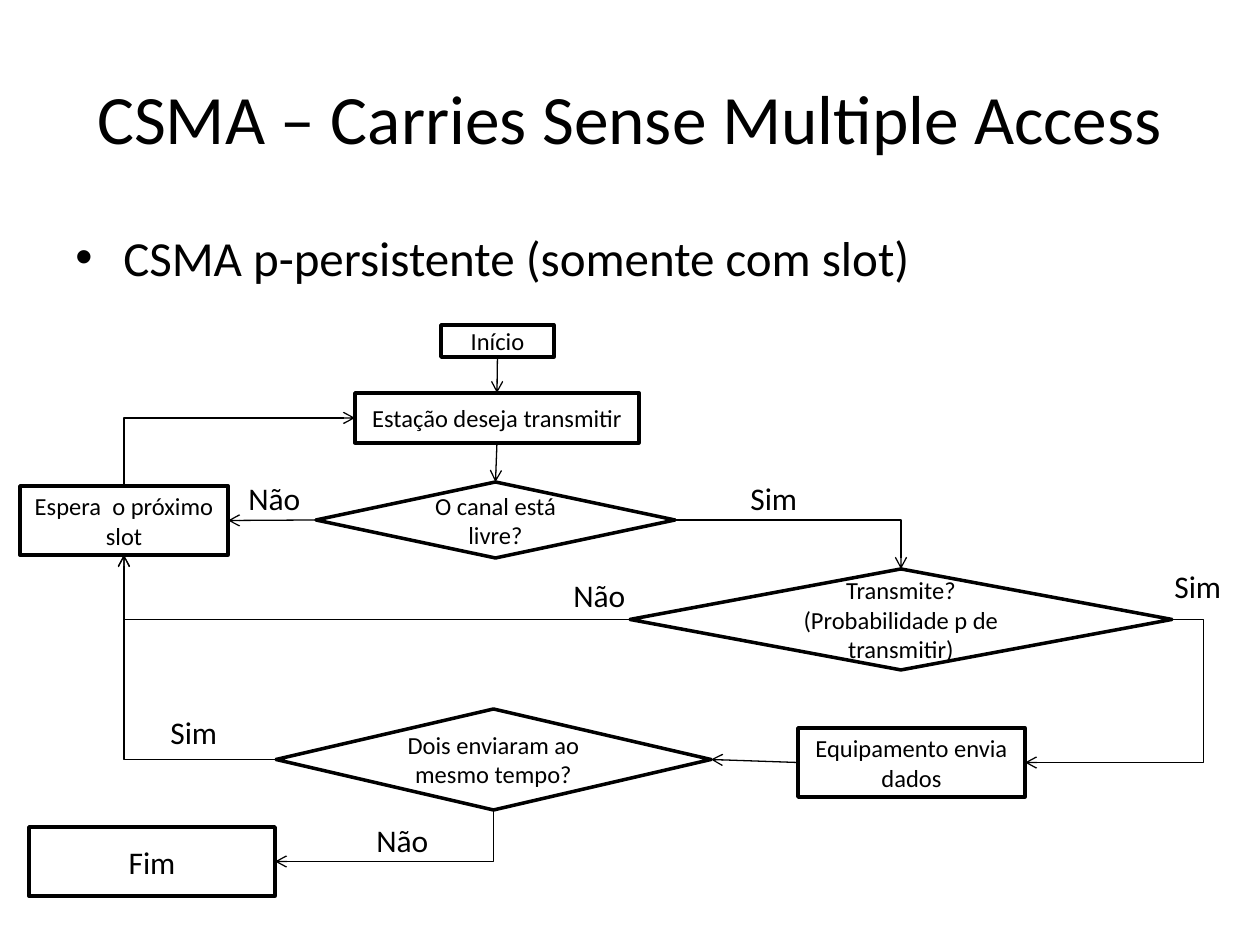
from lxml import etree
from pptx import Presentation
from pptx.dml.color import RGBColor
from pptx.enum.shapes import MSO_CONNECTOR, MSO_SHAPE
from pptx.enum.text import MSO_ANCHOR, PP_ALIGN
from pptx.oxml.ns import qn
from pptx.util import Pt

RECTANGLE, DIAMOND = MSO_SHAPE.RECTANGLE, MSO_SHAPE.DIAMOND
STRAIGHT, ELBOW = MSO_CONNECTOR.STRAIGHT, MSO_CONNECTOR.ELBOW
CENTER, LEFT, MIDDLE, TOP_ANCHOR = PP_ALIGN.CENTER, PP_ALIGN.LEFT, MSO_ANCHOR.MIDDLE, MSO_ANCHOR.TOP
TOP, WEST, BOTTOM, EAST = range(4)
EMU_PER_PX = 914400 / 126


def px(length):
    return round(length * EMU_PER_PX)


def color(value):
    return RGBColor.from_string(value)


class Flowchart:
    """Draws flowchart elements in one style on the current slide."""

    font, ink, paper = "Calibri", "000000", "FFFFFF"

    def __init__(self, slide):
        self.slide = slide

    def set_text(self, frame, text, size, align=LEFT, anchor=TOP_ANCHOR):
        frame.word_wrap = True
        frame.vertical_anchor = anchor
        paragraph = frame.paragraphs[0]
        paragraph.text = text
        paragraph.alignment = align
        paragraph.font.name = self.font
        paragraph.font.size = Pt(size)
        paragraph.font.color.rgb = color(self.ink)
        return paragraph

    def title(self, text, left, top, width, height):
        heading = self.slide.shapes.title
        heading.left, heading.top = px(left), px(top)
        heading.width, heading.height = px(width), px(height)
        self.set_text(heading.text_frame, text, 39.6, CENTER, MIDDLE)

    def label(self, text, left, top, width=98, height=50, size=18):
        box = self.slide.shapes.add_textbox(px(left), px(top), px(width), px(height))
        return self.set_text(box.text_frame, text, size)

    def bullet(self, text, left, top, width, height):
        properties = self.label(text, left, top, width, height, 28)._p.get_or_add_pPr()
        properties.set("marL", str(px(48)))
        properties.set("indent", str(px(-48)))
        bullet_font = etree.Element(qn("a:buFont"), typeface="Arial")
        bullet_sign = etree.Element(qn("a:buChar"), char="•")
        properties.find(qn("a:defRPr")).addprevious(bullet_font)
        bullet_font.addnext(bullet_sign)

    def node(self, kind, text, left, top, width, height, size=14):
        shape = self.slide.shapes.add_shape(kind, px(left), px(top), px(width), px(height))
        shape.shadow.inherit = False
        shape.fill.solid()
        shape.fill.fore_color.rgb = color(self.paper)
        shape.line.color.rgb = color(self.ink)
        shape.line.width = Pt(2)
        self.set_text(shape.text_frame, text, size, CENTER, MIDDLE)
        return shape

    def arrow(self, source, source_side, target, target_side, kind=STRAIGHT):
        connector = self.slide.shapes.add_connector(kind, 0, 0, 0, 0)
        connector.begin_connect(source, source_side)
        connector.end_connect(target, target_side)
        connector.line.color.rgb = color(self.ink)
        connector.line.width = Pt(0.75)
        properties = connector._element.spPr
        etree.SubElement(properties.find(qn("a:ln")), qn("a:tailEnd"), type="arrow")
        etree.SubElement(properties, qn("a:effectLst"))
        return connector

    def corner(self, source, source_side, target, target_side):
        connector = self.arrow(source, source_side, target, target_side, ELBOW)
        properties = connector._element.spPr
        properties.find(qn("a:prstGeom")).set("prst", "bentConnector2")
        if source_side in (TOP, BOTTOM):
            x1, y1 = connector.begin_x, connector.begin_y
            x2, y2 = connector.end_x, connector.end_y
            middle_x, middle_y = (x1 + x2) // 2, (y1 + y2) // 2
            half_x, half_y = (x2 - x1) // 2, (y2 - y1) // 2
            connector.begin_x, connector.begin_y = middle_x - half_y, middle_y + half_x
            connector.end_x, connector.end_y = middle_x + half_y, middle_y - half_x
            properties.find(qn("a:xfrm")).set("rot", "5400000")

    def loop(self, source, source_side, target, target_side, bend):
        connector = self.arrow(source, source_side, target, target_side, ELBOW)
        guides = connector._element.spPr.find(qn("a:prstGeom")).get_or_add_avLst()
        etree.SubElement(guides, qn("a:gd"), name="adj1", fmla=f"val {bend}")


def main():
    deck = Presentation()
    deck.slide_width, deck.slide_height = px(1260), px(945)
    chart = Flowchart(deck.slides.add_slide(deck.slide_layouts[5]))

    chart.title("CSMA – Carries Sense Multiple Access", 63, 38, 1134, 158)
    chart.bullet("CSMA p-persistente (somente com slot)", 63, 221, 1134, 624)

    start = chart.node(RECTANGLE, "Início", 441, 325, 113, 32)
    request = chart.node(RECTANGLE, "Estação deseja transmitir", 355, 393, 284, 50)
    channel_free = chart.node(DIAMOND, "O canal está livre?", 316, 482, 359, 76)
    wait = chart.node(RECTANGLE, "Espera  o próximo slot", 20, 486, 208, 69)
    transmit = chart.node(DIAMOND, "Transmite? (Probabilidade p de transmitir)", 630, 569, 542, 101)
    send = chart.node(RECTANGLE, "Equipamento envia dados", 798, 728, 227, 69)
    collision = chart.node(DIAMOND, "Dois enviaram ao mesmo tempo?", 276, 709, 435, 101)
    finish = chart.node(RECTANGLE, "Fim", 29, 827, 246, 69, 18)

    chart.arrow(start, BOTTOM, request, TOP)
    chart.arrow(request, BOTTOM, channel_free, TOP)
    chart.arrow(channel_free, WEST, wait, EAST)
    chart.arrow(send, WEST, collision, EAST)
    chart.corner(wait, TOP, request, WEST)
    chart.corner(channel_free, EAST, transmit, TOP)
    chart.corner(transmit, WEST, wait, BOTTOM)
    chart.corner(collision, WEST, wait, BOTTOM)
    chart.corner(collision, BOTTOM, finish, EAST)
    chart.loop(transmit, EAST, send, EAST, -21300)

    for left, top in ((738, 473), (1162, 561), (158, 707)):
        chart.label("Sim", left, top)
    for left, top in ((236, 473), (561, 570), (364, 815)):
        chart.label("Não", left, top)

    deck.save("out.pptx")


if __name__ == "__main__":
    main()
